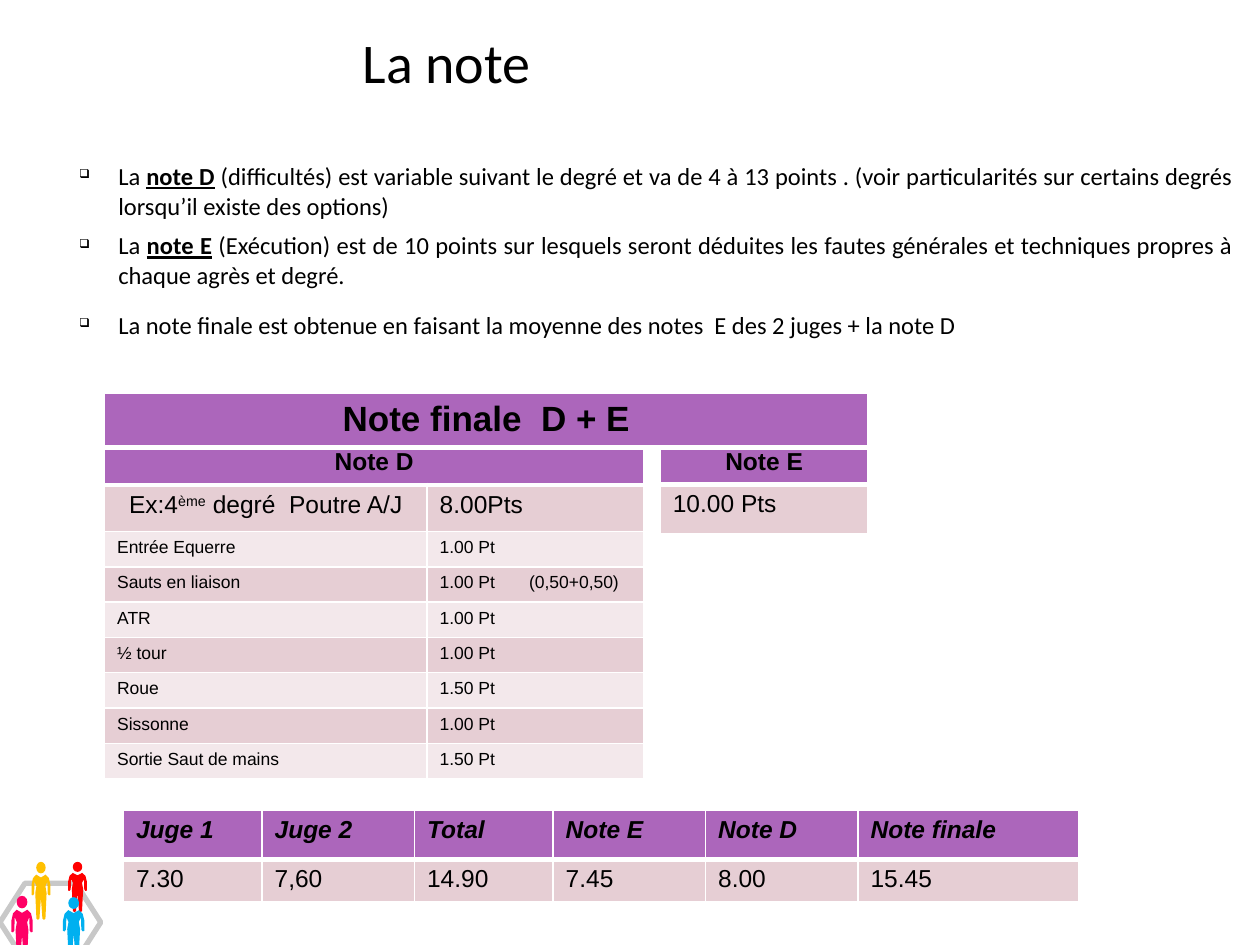
import pptx
import pptx.dml.color
import pptx.enum.shapes
import pptx.enum.text
import pptx.oxml
import pptx.oxml.ns
import pptx.util
from lxml import etree

Inches, Pt = pptx.util.Inches, pptx.util.Pt
ALIGN = pptx.enum.text.PP_ALIGN
SHAPE = pptx.enum.shapes.MSO_SHAPE

COLORS = {
    "text": "000000", "border": "FFFFFF", "header": "AC66BB",
    "dark band": "E6CED4", "light band": "F3E8EB", "hexagon": "C8C8C8",
}

TITLE = "La note"

# Each bullet: its spans as (text, style), then the space after it.
BULLETS = [
    ([("La ", ""), ("note D", "strong"),
      (" (difficultés) est variable suivant le degré et va de 4 à 13 points . "
       "(voir particularités sur certains degrés lorsqu’il existe des options)", "")], 0),
    ([("La ", ""), ("note E", "strong"),
      (" (Exécution) est de 10 points sur lesquels seront déduites les fautes "
       "générales et techniques propres à chaque agrès et degré.", "")], 6),
    ([("La note finale est obtenue en faisant la moyenne des notes  E des "
       "2 juges + la note D", "")], 6),
]

ELEMENTS = [
    ("Entrée Equerre", "1.00 Pt"), ("Sauts en liaison", "1.00 Pt\t(0,50+0,50)"),
    ("ATR", "1.00 Pt"), ("½ tour", "1.00 Pt"), ("Roue", "1.50 Pt"),
    ("Sissonne", "1.00 Pt"), ("Sortie Saut de mains", "1.50 Pt"),
]
EXAMPLE = [("Ex:4", ""), ("ème", "super"), (" degré  Poutre A/J", "")]

# Left edge, top, column widths and row heights in inches; the first row is the header.
TABLES = [
    {"at": (0.83, 3.51), "columns": [2.56, 1.72], "rows": [0.34, 0.37] + [0.28] * 7,
     "cells": [("Note D", ""), (EXAMPLE, "8.00Pts"), *ELEMENTS],
     "sizes": [14, 14] + [10] * 7, "centred": {(0, 0), (1, 0)}, "merge": True},
    {"at": (5.24, 3.51), "columns": [1.65], "rows": [0.32, 0.39],
     "cells": [("Note E",), ("10.00 Pts",)], "sizes": [14, 14], "centred": {(0, 0)}},
    {"at": (0.83, 3.12), "columns": [6.06], "rows": [0.4],
     "cells": [("Note finale  D + E",)], "sizes": [20], "centred": {(0, 0)}},
    {"at": (0.98, 6.43), "columns": [1.1, 1.21, 1.1, 1.21, 1.21, 1.75], "rows": [0.39, 0.34],
     "cells": [("Juge 1", "Juge 2", "Total", "Note E", "Note D", "Note finale"),
               ("7.30", "7,60", "14.90", "7.45", "8.00", "15.45")],
     "sizes": [14, 14], "centred": set(), "italic header": True},
]

PEOPLE = [  # left, top, width, height, colour
    (0.09, 7.11, 0.17, 0.5, "FF0066"), (0.25, 6.84, 0.15, 0.46, "FFC000"),
    (0.54, 6.84, 0.15, 0.4, "FF0000"), (0.5, 7.12, 0.17, 0.47, "00B0F0"),
]
# Right half of a standing body, as shares of width (from the middle) and height.
HALF_BODY = [
    (0, 0.27), (0.25, 0.22), (0.42, 0.28), (0.5, 0.4), (0.5, 0.57), (0.42, 0.58),
    (0.36, 0.55), (0.34, 0.34), (0.24, 0.42), (0.3, 0.54), (0.24, 0.98),
    (0.16, 1), (0.08, 0.98), (0, 0.62),
]


def rgb(value):
    return pptx.dml.color.RGBColor.from_string(value)


def add_child(parent, tag, **attributes):
    child = etree.SubElement(parent, pptx.oxml.ns.qn(tag))
    for name, value in attributes.items():
        child.set(name, str(value))
    return child


def write_spans(para, spans, font, size, bold=False, italic=False):
    for text, style in spans:
        span = para.add_run()
        span.text = text
        span.font.name, span.font.size = font, Pt(size)
        span.font.color.rgb = rgb(COLORS["text"])
        span.font.bold, span.font.italic = bold or style == "strong", italic
        if style == "strong":
            span.font.underline = True
        if style == "super":
            span.font._element.set("baseline", "30000")


def paint(shape, color):
    shape.shadow.inherit = False
    shape.fill.solid()
    shape.fill.fore_color.rgb = rgb(color)
    shape.line.fill.background()


def add_person(page, left, top, width, height, color):
    head = page.shapes.add_shape(
        SHAPE.OVAL, Inches(left + width / 4), Inches(top),
        Inches(width / 2), Inches(height / 5))
    paint(head, color)
    outline = HALF_BODY + [(-x, y) for x, y in reversed(HALF_BODY[1:-1])]
    points = [(Inches(left + width * (0.5 + x)), Inches(top + height * y)) for x, y in outline]
    builder = page.shapes.build_freeform(*points[0])
    builder.add_line_segments(points[1:], close=True)
    paint(builder.convert_to_shape(), color)


def add_emblem(page):
    hexagon = page.shapes.add_shape(
        SHAPE.HEXAGON, 0, Inches(7.01), Inches(0.8), Inches(0.62))
    hexagon.adjustments[0] = 0.32
    hexagon.shadow.inherit = False
    hexagon.fill.background()
    hexagon.line.color.rgb = rgb(COLORS["hexagon"])
    hexagon.line.width = Pt(3)
    for person in PEOPLE:
        add_person(page, *person)


def add_title(page):
    title = page.shapes.title
    title.left, title.top, title.width, title.height = map(Inches, (1.46, 0.21, 4.17, 0.55))
    frame = title.text_frame
    frame.vertical_anchor = pptx.enum.text.MSO_ANCHOR.MIDDLE
    frame.paragraphs[0].alignment = ALIGN.CENTER
    write_spans(frame.paragraphs[0], [(TITLE, "")], "Calibri", 32)


def add_bullets(page):
    box = page.shapes.add_textbox(*map(Inches, (0.2, 1.23, 9.69, 6.14)))
    frame = box.text_frame
    frame.word_wrap = True
    for index, (spans, space_after) in enumerate(BULLETS):
        para = frame.add_paragraph() if index else frame.paragraphs[0]
        para.alignment = ALIGN.JUSTIFY
        para.space_before, para.space_after = Pt(6 if index else 0), Pt(space_after)
        properties = para._p.get_or_add_pPr()
        properties.set("marL", str(Inches(0.64)))
        properties.set("indent", str(Inches(-0.31)))
        add_child(properties, "a:buSzPct", val=50000)
        add_child(properties, "a:buChar", char="❑")
        write_spans(para, spans, "Calibri", 14)


def set_borders(cell, row):
    """White lines, heavier between the header row and the rest."""
    widths = {"L": 1, "R": 1, "T": 3 if row == 1 else 1, "B": 3 if row == 0 else 1}
    properties = cell._tc.get_or_add_tcPr()
    for side, width in widths.items():
        line = add_child(properties, f"a:ln{side}", w=Pt(width))
        add_child(add_child(line, "a:solidFill"), "a:srgbClr", val=COLORS["border"])


def add_table(page, spec_table):
    columns, rows = spec_table["columns"], spec_table["rows"]
    left, top = spec_table["at"]
    table = page.shapes.add_table(
        len(rows), len(columns), Inches(left), Inches(top),
        Inches(sum(columns)), Inches(sum(rows))).table
    table.first_row = table.horz_banding = False
    for column, width in zip(table.columns, columns):
        column.width = Inches(width)
    for row, height in zip(table.rows, rows):
        row.height = Inches(height)
    for row, values in enumerate(spec_table["cells"]):
        band = "header" if row == 0 else "dark band" if row % 2 else "light band"
        for column, value in enumerate(values):
            cell = table.cell(row, column)
            set_borders(cell, row)
            cell.fill.solid()
            cell.fill.fore_color.rgb = rgb(COLORS[band])
            para = cell.text_frame.paragraphs[0]
            if (row, column) in spec_table["centred"]:
                para.alignment = ALIGN.CENTER
            if "\t" in value:
                stops = add_child(para._p.get_or_add_pPr(), "a:tabLst")
                add_child(stops, "a:tab", pos=Inches(0.71), algn="l")
            spans = [(value, "")] if isinstance(value, str) else value
            if value:
                write_spans(para, spans, "Arial", spec_table["sizes"][row], bold=row == 0,
                            italic=row == 0 and spec_table.get("italic header", False))
    if spec_table.get("merge"):
        table.cell(0, 0).merge(table.cell(0, len(columns) - 1))


def main():
    deck = pptx.Presentation()
    deck.slide_width, deck.slide_height = Inches(10), Inches(7.5)
    page = deck.slides.add_slide(deck.slide_layouts[5])
    add_emblem(page)
    add_title(page)
    add_bullets(page)
    for table in TABLES:
        add_table(page, table)
    deck.save("out.pptx")


if __name__ == "__main__":
    main()
